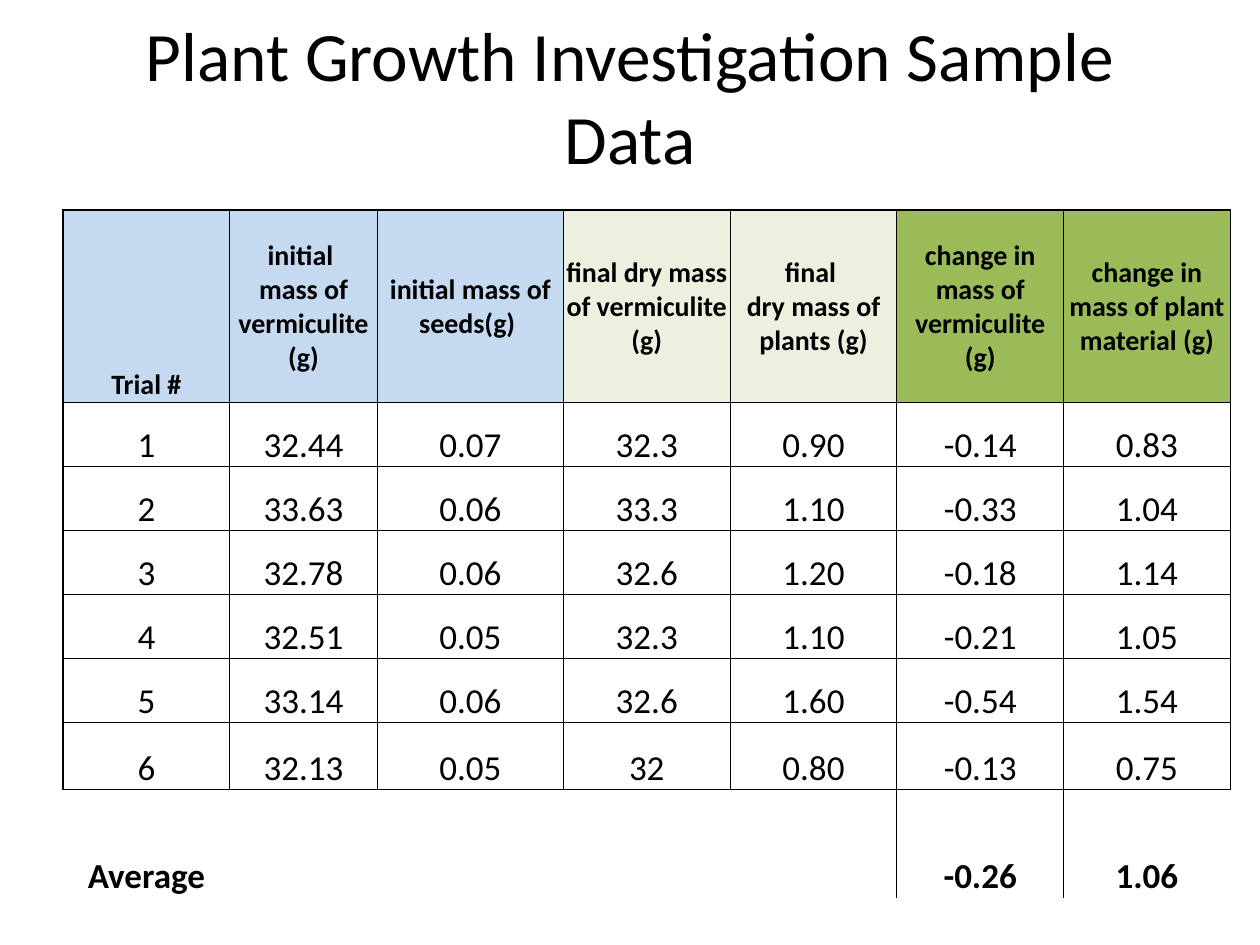
from dataclasses import dataclass

from lxml.etree import SubElement
from pptx import Presentation
from pptx.dml.color import RGBColor
from pptx.enum.text import MSO_ANCHOR as Anchor, PP_ALIGN as Align
from pptx.oxml.ns import qn
from pptx.util import Pt


@dataclass(frozen=True)
class Theme:
    font: str = "Calibri"
    ink: str = "000000"
    initial: str = "C5D9F1"
    final: str = "EBF1DE"
    change: str = "9BBB59"
    title_size: float = 39.6
    header_size: float = 16
    body_size: float = 20
    thin: float = 0.5
    thick: float = 1


THEME = Theme()

TITLE = "Plant Growth Investigation Sample Data"
HEADERS = [
    ("Trial #", THEME.initial),
    ("initial \nmass of vermiculite\n(g)", THEME.initial),
    ("initial mass of seeds(g) ", THEME.initial),
    ("final dry mass of vermiculite\n(g)", THEME.final),
    ("final \ndry mass of plants (g)", THEME.final),
    ("change in mass of vermiculite (g)", THEME.change),
    ("change in mass of plant material (g)", THEME.change),
]
TRIALS = [
    ["1", "32.44", "0.07", "32.3", "0.90", "-0.14", "0.83"],
    ["2", "33.63", "0.06", "33.3", "1.10", "-0.33", "1.04"],
    ["3", "32.78", "0.06", "32.6", "1.20", "-0.18", "1.14"],
    ["4", "32.51", "0.05", "32.3", "1.10", "-0.21", "1.05"],
    ["5", "33.14", "0.06", "32.6", "1.60", "-0.54", "1.54"],
    ["6", "32.13", "0.05", "32", "0.80", "-0.13", "0.75"],
]
AVERAGE = ["Average", "", "", "", "", "-0.26", "1.06"]
COLUMN_WIDTHS = [95.3, 84.4, 106.3, 95.3, 95.3, 95.3, 95.3]
ROW_HEIGHTS = [110] + [36.6] * 5 + [38.2, 61.8]


def style_text(text_frame, size, bold=False):
    for paragraph in text_frame.paragraphs:
        paragraph.alignment = Align.CENTER
        font = paragraph.font
        font.name, font.size, font.bold = THEME.font, Pt(size), bold
        font.color.rgb = RGBColor.from_string(THEME.ink)


def set_borders(cell, **widths):
    """Draw the sides L, R, T and B; a width of 0 leaves a side open."""
    properties = cell._tc.get_or_add_tcPr()
    for side in "LRTB":
        line = SubElement(properties, qn(f"a:ln{side}"), w=str(Pt(widths[side])))
        if widths[side]:
            fill = SubElement(line, qn("a:solidFill"))
            SubElement(fill, qn("a:srgbClr"), val=THEME.ink)
        else:
            SubElement(line, qn("a:noFill"))


def border_widths(row, column):
    """Thick outer left, top and bottom edges; an open average row below."""
    average = len(TRIALS) + 1
    last_column = len(HEADERS) - 1
    closing = THEME.thin if column == last_column else THEME.thick
    if row == average:
        return dict(
            L=THEME.thin if column >= last_column - 1 else 0,
            R=THEME.thin if last_column - 2 <= column < last_column else 0,
            T=closing,
            B=0,
        )
    return dict(
        L=THEME.thick if column == 0 else THEME.thin,
        R=THEME.thin,
        T=THEME.thick if row == 0 else THEME.thin,
        B=closing if row == average - 1 else THEME.thin,
    )


def add_title(slide, left, top, width, height):
    box = slide.shapes.add_textbox(Pt(left), Pt(top), Pt(width), Pt(height))
    frame = box.text_frame
    frame.word_wrap = True
    frame.vertical_anchor = Anchor.MIDDLE
    frame.text = TITLE
    style_text(frame, THEME.title_size)


def add_data_table(slide, left, top):
    rows = [[label for label, _ in HEADERS], *TRIALS, AVERAGE]
    table = slide.shapes.add_table(
        len(rows), len(HEADERS), Pt(left), Pt(top),
        Pt(sum(COLUMN_WIDTHS)), Pt(sum(ROW_HEIGHTS)),
    ).table
    table.first_row = table.horz_banding = False
    for column, width in zip(table.columns, COLUMN_WIDTHS):
        column.width = Pt(width)
    for row, height in zip(table.rows, ROW_HEIGHTS):
        row.height = Pt(height)

    for r, values in enumerate(rows):
        header = r == 0
        for c, value in enumerate(values):
            cell = table.cell(r, c)
            cell.text = value
            cell.margin_left = cell.margin_right = cell.margin_top = Pt(0.7)
            cell.margin_bottom = 0
            cell.vertical_anchor = Anchor.MIDDLE if header and c else Anchor.BOTTOM
            style_text(
                cell.text_frame,
                THEME.header_size if header else THEME.body_size,
                bold=header or values is AVERAGE,
            )
            set_borders(cell, **border_widths(r, c))
            if header:
                cell.fill.solid()
                cell.fill.fore_color.rgb = RGBColor.from_string(HEADERS[c][1])
            else:
                cell.fill.background()


def main():
    presentation = Presentation()
    presentation.slide_width, presentation.slide_height = Pt(720), Pt(540)
    slide = presentation.slides.add_slide(presentation.slide_layouts[6])
    add_title(slide, 36, 9.4, 648, 90)
    add_data_table(slide, 36, 120)
    presentation.save("out.pptx")


if __name__ == "__main__":
    main()
